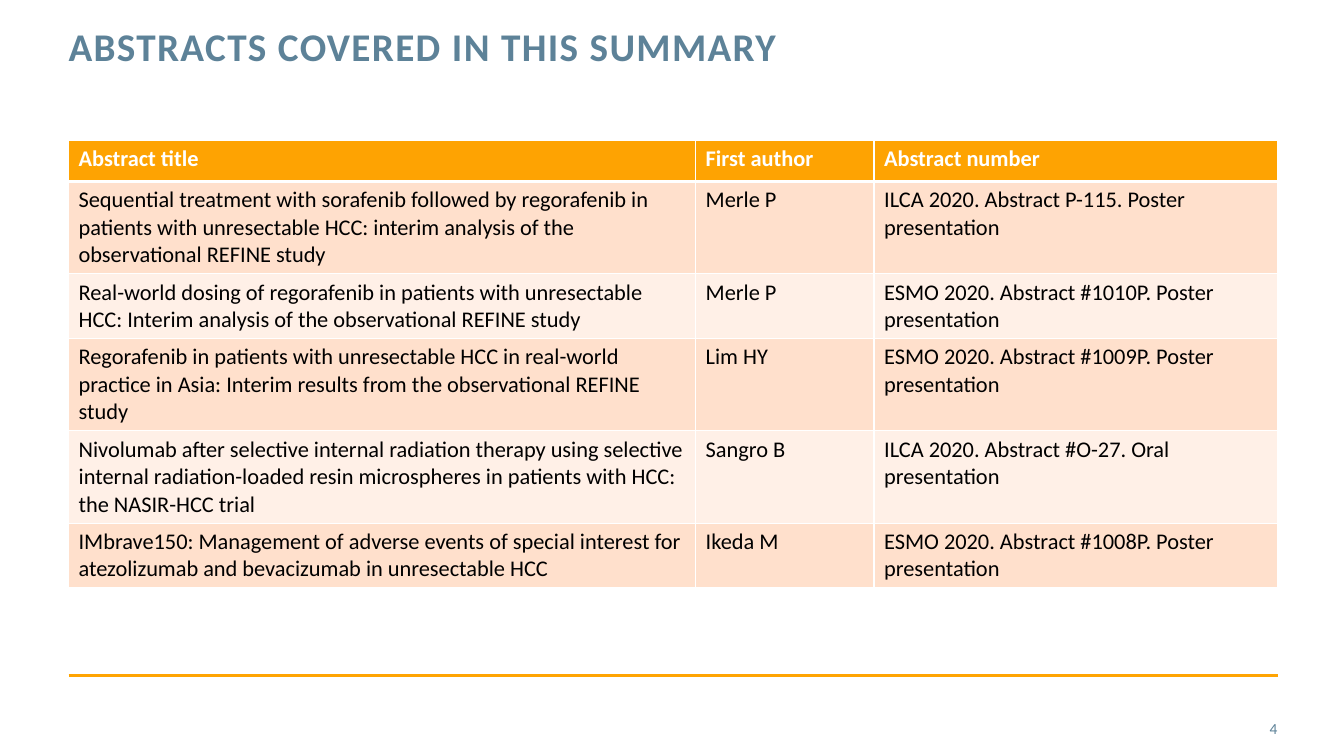
from lxml.etree import SubElement
from pptx import Presentation
from pptx.dml.color import RGBColor
from pptx.enum.shapes import MSO_CONNECTOR
from pptx.enum.text import MSO_ANCHOR, PP_ALIGN
from pptx.oxml.ns import qn
from pptx.util import Inches, Pt

TITLE = "ABSTRACTS COVERED IN THIS SUMMARY"
PAGE = "4"
HEADER = ("Abstract title", "First author", "Abstract number")
ABSTRACTS = [
    ("Sequential treatment with sorafenib followed by regorafenib in patients with "
     "unresectable HCC: interim analysis of the observational REFINE study",
     "Merle P", "ILCA 2020. Abstract P-115. Poster presentation"),
    ("Real-world dosing of regorafenib in patients with unresectable HCC: Interim "
     "analysis of the observational REFINE study",
     "Merle P", "ESMO 2020. Abstract #1010P. Poster presentation"),
    ("Regorafenib in patients with unresectable HCC in real-world practice in Asia: "
     "Interim results from the observational REFINE study",
     "Lim HY", "ESMO 2020. Abstract #1009P. Poster presentation"),
    ("Nivolumab after selective internal radiation therapy using selective internal "
     "radiation-loaded resin microspheres in patients with HCC: the NASIR-HCC trial",
     "Sangro B", "ILCA 2020. Abstract #O-27. Oral presentation"),
    ("IMbrave150: Management of adverse events of special interest for atezolizumab "
     "and bevacizumab in unresectable HCC",
     "Ikeda M", "ESMO 2020. Abstract #1008P. Poster presentation"),
]

FONT = "Calibri"
SLATE = RGBColor(0x5D, 0x82, 0x98)
ORANGE = RGBColor(0xFF, 0xA4, 0x02)
HEADER_FILL = RGBColor(0xFE, 0xA3, 0x02)
BANDS = (RGBColor(0xFF, 0xE0, 0xCC), RGBColor(0xFF, 0xF0, 0xE7))
WHITE = RGBColor(0xFF, 0xFF, 0xFF)
BLACK = RGBColor(0, 0, 0)

LEFT, WIDTH = 0.68, 12
COLUMNS = (6.22, 1.77, 4)
ROW_HEIGHT = 0.41


def write(tf, text, size, color, bold=False, align=PP_ALIGN.LEFT, anchor=None,
          leading=None, tracking=None):
    if anchor is not None:
        tf.margin_left = tf.margin_right = tf.margin_top = tf.margin_bottom = 0
        tf.vertical_anchor = anchor
    tf.word_wrap = True
    p = tf.paragraphs[0]
    p.alignment = align
    if leading:
        p.line_spacing = Pt(leading)
    r = p.add_run()
    r.text = text
    r.font.name, r.font.size, r.font.bold = FONT, Pt(size), bold
    r.font.color.rgb = color
    if tracking:
        r.font._element.set("spc", str(tracking * 100))


def add_borders(cell, widths):
    tcPr = cell._tc.get_or_add_tcPr()
    for side, width in zip("LRTB", widths):
        ln = SubElement(tcPr, qn(f"a:ln{side}"), w=str(Pt(width)))
        fill = SubElement(ln, qn("a:solidFill"))
        SubElement(fill, qn("a:srgbClr"), val=str(WHITE))


def add_abstracts(s):
    rows = [HEADER] + ABSTRACTS
    frame = s.shapes.add_table(len(rows), len(COLUMNS), Inches(LEFT), Inches(1.39),
                               Inches(sum(COLUMNS)), Inches(ROW_HEIGHT * len(rows)))
    table = frame.table
    for column, width in zip(table.columns, COLUMNS):
        column.width = Inches(width)
    for i, row in enumerate(rows):
        table.rows[i].height = Inches(ROW_HEIGHT)
        head = i == 0
        for j, text in enumerate(row):
            cell = table.cell(i, j)
            add_borders(cell, (1, 1, 3 if i == 1 else 1, 3 if head else 1))
            cell.fill.solid()
            cell.fill.fore_color.rgb = HEADER_FILL if head else BANDS[(i - 1) % 2]
            write(cell.text_frame, text, 16, WHITE if head else BLACK, bold=head)


def main():
    prs = Presentation()
    prs.slide_width, prs.slide_height = Inches(13.33), Inches(7.5)
    s = prs.slides.add_slide(prs.slide_layouts[5])

    rule = s.shapes.add_connector(MSO_CONNECTOR.STRAIGHT, Inches(LEFT), Inches(6.7),
                                  Inches(LEFT + WIDTH), Inches(6.7))
    rule.line.color.rgb, rule.line.width = ORANGE, Pt(2)
    SubElement(rule._element.spPr, qn("a:effectLst"))

    add_abstracts(s)

    title = s.shapes.title
    title.left, title.top = Inches(LEFT), Inches(0.27)
    title.width, title.height = Inches(9.56), Inches(0.88)
    write(title.text_frame, TITLE, 28, SLATE, bold=True, anchor=MSO_ANCHOR.TOP,
          leading=30, tracking=1)

    number = s.shapes.add_textbox(Inches(11.81), Inches(7.03), Inches(0.86), Inches(0.4))
    write(number.text_frame, PAGE, 11, SLATE, align=PP_ALIGN.RIGHT,
          anchor=MSO_ANCHOR.MIDDLE)

    prs.save("out.pptx")


if __name__ == "__main__":
    main()
